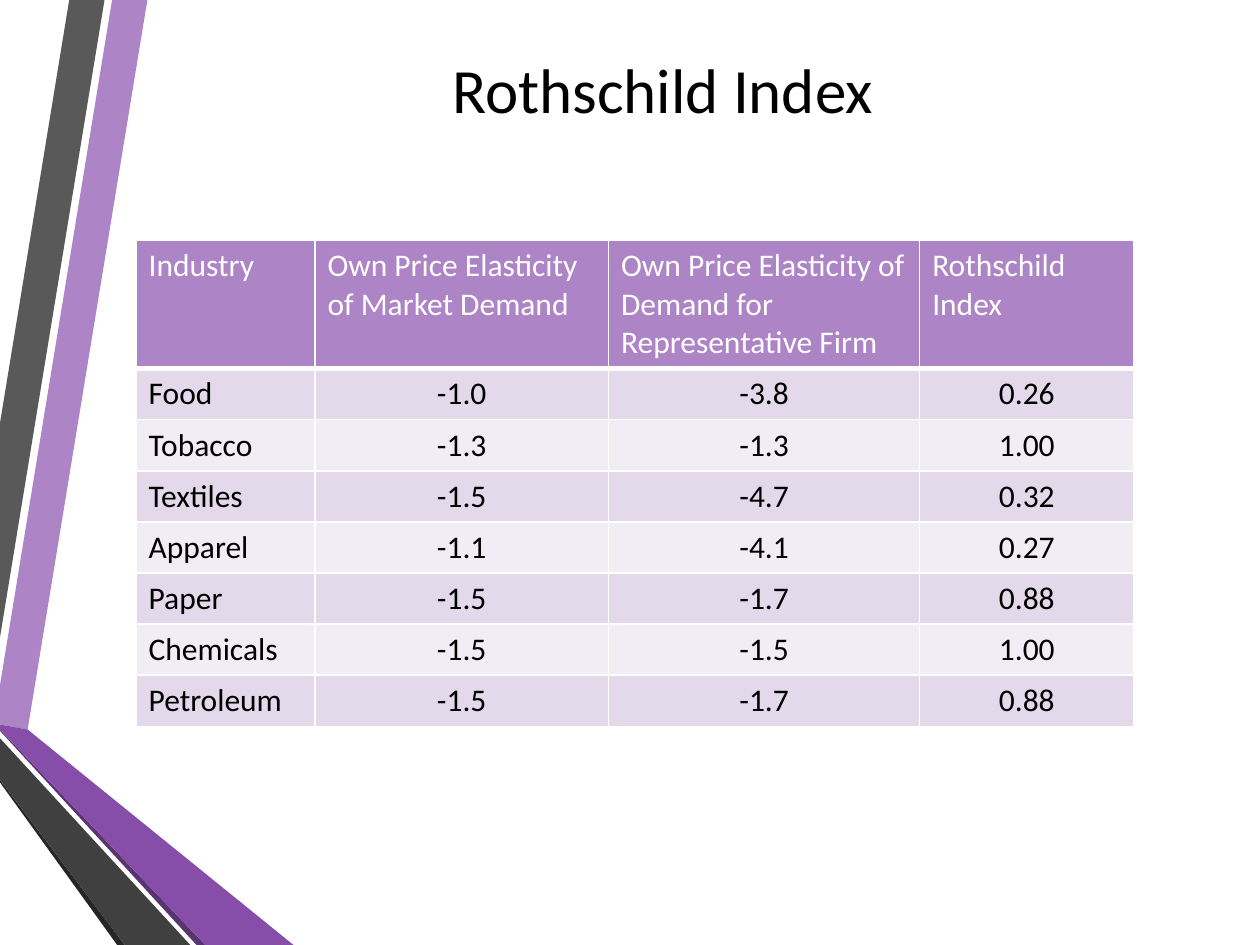
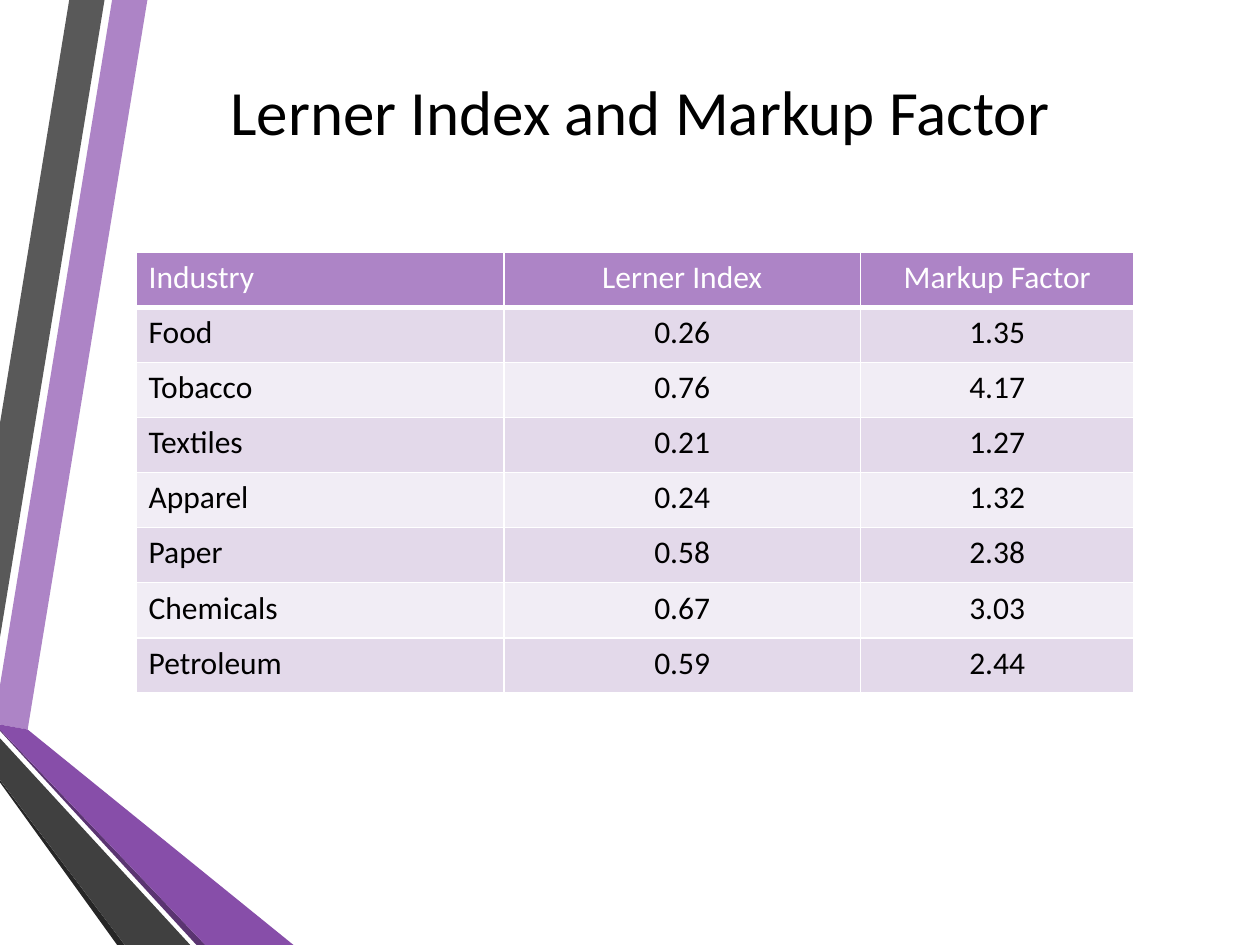
import pptx
import pptx.dml.color
import pptx.enum.text
import pptx.oxml
import pptx.oxml.ns
import pptx.util
from pptx.util import Inches

FONT = "Calibri"
BLACK, WHITE = "000000", "FFFFFF"
LILAC, LILAC_LIGHT, LILAC_PALE = "AD84C6", "E3D9EA", "F1EDF5"
CENTER = pptx.enum.text.PP_ALIGN.CENTER
LEFT = pptx.enum.text.PP_ALIGN.LEFT

RIBBONS = [
    (LILAC, [(0, 5.44), (0, 5.75), (0.22, 5.79), (1.17, 0), (0.89, 0)]),
    ("595959", [(0.83, 0), (0.55, 0), (0, 3.36), (0, 5.06)]),
    ("262626", [(0, 6.19), (0, 6.21), (0.93, 7.5), (0.99, 7.5)]),
    ("5A3471", [(0, 5.79), (0, 5.8), (1.56, 7.5), (1.63, 7.5)]),
    ("874EA9", [(0, 5.79), (1.63, 7.5), (2.33, 7.5), (0.22, 5.79), (0, 5.75)]),
    ("404040", [(0, 6.19), (0.99, 7.5), (1.51, 7.5), (0, 5.86)]),
]

INDUSTRIES = ["Food", "Tobacco", "Textiles", "Apparel", "Paper", "Chemicals", "Petroleum"]


def color(value):
    return pptx.dml.color.RGBColor.from_string(value)


class Deck:
    def __init__(self):
        self.presentation = pptx.Presentation()
        self.presentation.slide_width = Inches(10)
        self.presentation.slide_height = Inches(7.5)
        self.slide = None

    def add_slide(self, title, left, top, width):
        self.slide = self.presentation.slides.add_slide(self.presentation.slide_layouts[5])
        for fill, corners in RIBBONS:
            self.ribbon(fill, corners)
        self.title(title, left, top, width)

    def ribbon(self, fill, corners):
        start, *others = [(Inches(x), Inches(y)) for x, y in corners]
        outline = self.slide.shapes.build_freeform(*start)
        outline.add_line_segments(others, close=True)
        ribbon = outline.convert_to_shape()
        ribbon.shadow.inherit = False
        ribbon.fill.solid()
        ribbon.fill.fore_color.rgb = color(fill)
        ribbon.line.fill.background()

    def title(self, text, left, top, width):
        title = self.slide.shapes.title
        title.element.getparent().append(title.element)
        title.left, title.top = Inches(left), Inches(top)
        title.width, title.height = Inches(width), Inches(0.75)
        title.text_frame.vertical_anchor = pptx.enum.text.MSO_ANCHOR.MIDDLE
        self.set_text(title.text_frame, text, 36, BLACK, CENTER)

    def set_text(self, frame, text, size, ink, align):
        frame.text = text
        paragraph = frame.paragraphs[0]
        paragraph.alignment = align
        paragraph.font.name = FONT
        paragraph.font.size = pptx.util.Pt(size)
        paragraph.font.bold = False
        paragraph.font.color.rgb = color(ink)

    def table(self, top, height, header_height, widths, rows, header_aligns):
        frame = self.slide.shapes.add_table(
            len(rows), len(widths), Inches(1.08), Inches(top), Inches(sum(widths)), Inches(height))
        grid = frame.table
        for column, width in zip(grid.columns, widths):
            column.width = Inches(width)
        body_height = (height - header_height) / (len(rows) - 1)
        for r, values in enumerate(rows):
            header = r == 0
            grid.rows[r].height = Inches(header_height if header else body_height)
            fill = LILAC if header else (LILAC_PALE, LILAC_LIGHT)[r % 2]
            aligns = header_aligns if header else [LEFT] + [CENTER] * (len(widths) - 1)
            for c, value in enumerate(values):
                cell = grid.cell(r, c)
                self.borders(cell, 3 if header else 1)
                cell.fill.solid()
                cell.fill.fore_color.rgb = color(fill)
                self.set_text(cell.text_frame, value, 18, WHITE if header else BLACK, aligns[c])

    def borders(self, cell, bottom):
        properties = cell._tc.get_or_add_tcPr()
        for side, points in (("L", 1), ("R", 1), ("T", 1), ("B", bottom)):
            properties.append(pptx.oxml.parse_xml(
                f'<a:ln{side} {pptx.oxml.ns.nsdecls("a")} w="{pptx.util.Pt(points)}">'
                f'<a:solidFill><a:srgbClr val="{WHITE}"/></a:solidFill></a:ln{side}>'))


def main():
    deck = Deck()

    deck.add_slide("Rothschild Index", 0.52, 0.33, 9.48)
    market = ["-1.0", "-1.3", "-1.5", "-1.1", "-1.5", "-1.5", "-1.5"]
    firm = ["-3.8", "-1.3", "-4.7", "-4.1", "-1.7", "-1.5", "-1.7"]
    rothschild = ["0.26", "1.00", "0.32", "0.27", "0.88", "1.00", "0.88"]
    headings = ("Industry", "Own Price Elasticity of Market Demand",
                "Own Price Elasticity of Demand for Representative Firm", "Rothschild Index")
    deck.table(1.91, 3.84, 1.01, [1.42, 2.33, 2.47, 1.7],
               [headings, *zip(INDUSTRIES, market, firm, rothschild)], [LEFT] * 4)

    deck.add_slide("Lerner Index and Markup Factor", 0.33, 0.5, 9.5)
    lerner = ["0.26", "0.76", "0.21", "0.24", "0.58", "0.67", "0.59"]
    markup = ["1.35", "4.17", "1.27", "1.32", "2.38", "3.03", "2.44"]
    deck.table(2, 3.5, 0.44, [2.92, 2.83, 2.17],
               [("Industry", "Lerner Index", "Markup Factor"), *zip(INDUSTRIES, lerner, markup)],
               [LEFT, CENTER, CENTER])

    deck.presentation.save("out.pptx")


if __name__ == "__main__":
    main()
